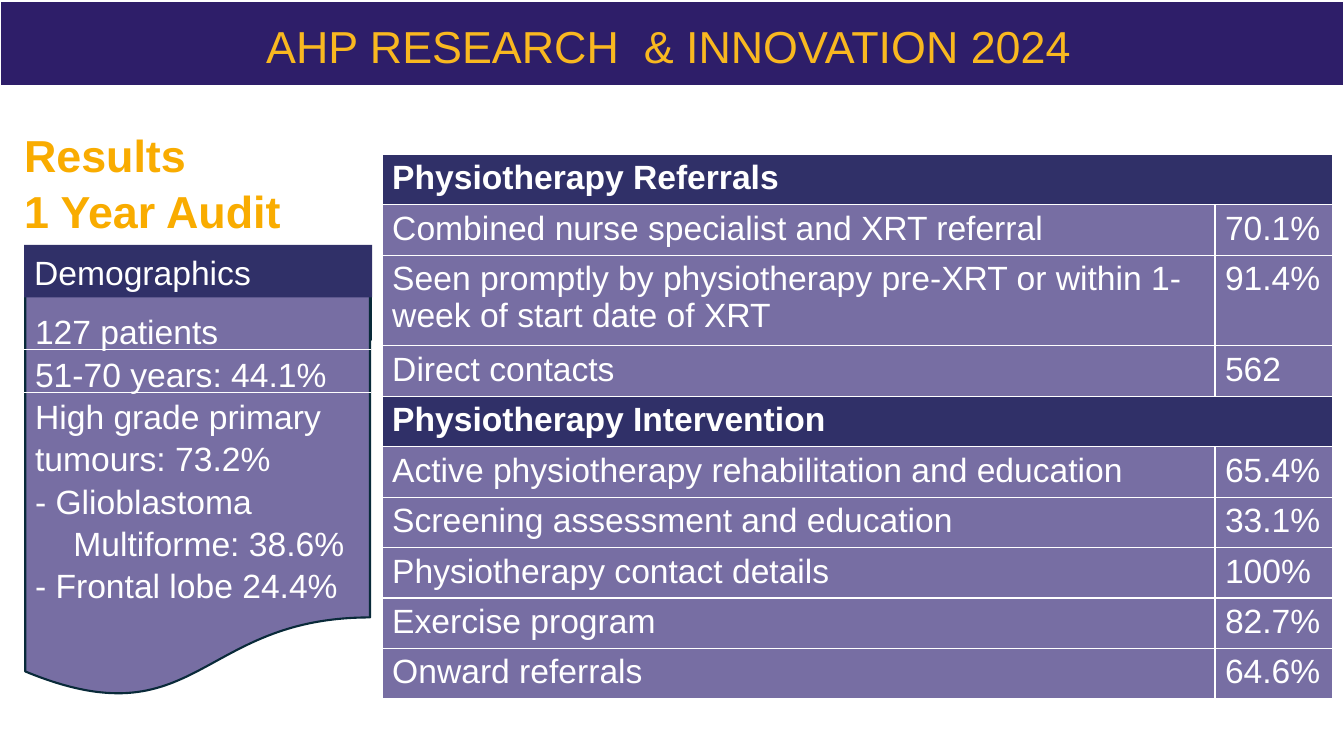
from lxml import etree
from pptx import Presentation
from pptx.dml.color import RGBColor
from pptx.enum.shapes import MSO_CONNECTOR, MSO_SHAPE
from pptx.enum.text import MSO_ANCHOR, PP_ALIGN
from pptx.oxml.ns import qn
from pptx.util import Pt

PX = 9144  # 100 px to the inch
RECTANGLE = MSO_SHAPE.RECTANGLE
DOCUMENT = MSO_SHAPE.FLOWCHART_DOCUMENT
STRAIGHT = MSO_CONNECTOR.STRAIGHT
TOP, MIDDLE = MSO_ANCHOR.TOP, MSO_ANCHOR.MIDDLE
LEFT = PP_ALIGN.LEFT

FONT = "Arial"
LINE_SPACING = 1.05
COLOURS = {
    "white": "FFFFFF",
    "banner": "2E1E69",
    "title": "F9B820",
    "heading": "F9AC00",
    "navy": "303068",
    "lilac": "776EA3",
    "outline": "092A39",
}

TITLE = "AHP RESEARCH  & INNOVATION 2024"
HEADING = ["Results", "1 Year Audit"]
DEMOGRAPHICS = [
    "127 patients",
    "51-70 years: 44.1%",
    "High grade primary tumours: 73.2%",
    "- Glioblastoma Multiforme: 38.6%",
    "- Frontal lobe 24.4%",
]
# A row without a value is a section heading across both columns
AUDIT_ROWS = [
    ("Physiotherapy Referrals", None),
    ("Combined nurse specialist and XRT referral", "70.1%"),
    ("Seen promptly by physiotherapy pre-XRT or within 1-week of start date of XRT", "91.4%"),
    ("Direct contacts", "562"),
    ("Physiotherapy Intervention", None),
    ("Active physiotherapy rehabilitation and education", "65.4%"),
    ("Screening assessment and education", "33.1%"),
    ("Physiotherapy contact details", "100%"),
    ("Exercise program", "82.7%"),
    ("Onward referrals", "64.6%"),
]
COLUMN_WIDTHS = (826, 117)
ROW_HEIGHT, TALL_ROW_HEIGHT, TALL_ROW = 50, 90, 2


def colour(name):
    return RGBColor.from_string(COLOURS[name])


def scaled(*lengths):
    return [length * PX for length in lengths]


def write(frame, lines, size, ink, bold=False, spacing=LINE_SPACING):
    frame.text = "\n".join(lines)
    frame.word_wrap = True
    for para in frame.paragraphs:
        para.alignment = LEFT
        para.line_spacing = spacing
        for span in para.runs:
            span.font.name = FONT
            span.font.size = Pt(size)
            span.font.bold = bold
            span.font.color.rgb = colour(ink)


def add_panel(page, kind, area, fill, outline=None):
    panel = page.shapes.add_shape(kind, *scaled(*area))
    panel.shadow.inherit = False
    panel.fill.solid()
    panel.fill.fore_color.rgb = colour(fill)
    if outline:
        panel.line.color.rgb = colour(outline)
        panel.line.width = Pt(1.5)
    else:
        panel.line.fill.background()
    return panel


def add_text(page, area, lines, size, ink, bold=False):
    box = page.shapes.add_textbox(*scaled(*area))
    write(box.text_frame, lines, size, ink, bold)
    return box


def add_divider(page, left, right, y):
    divider = page.shapes.add_connector(STRAIGHT, *scaled(left, y, right, y))
    divider.line.color.rgb = colour("white")
    divider.line.width = Pt(0.75)
    etree.SubElement(divider.element.spPr, qn("a:effectLst"))


def add_audit_table(page, left, top):
    heights = [ROW_HEIGHT] * len(AUDIT_ROWS)
    heights[TALL_ROW] = TALL_ROW_HEIGHT
    area = scaled(left, top, sum(COLUMN_WIDTHS), sum(heights))
    table = page.shapes.add_table(len(AUDIT_ROWS), len(COLUMN_WIDTHS), *area).table
    for column, width in zip(table.columns, COLUMN_WIDTHS):
        column.width = width * PX
    for index, (values, height) in enumerate(zip(AUDIT_ROWS, heights)):
        row = table.rows[index]
        row.height = height * PX
        is_section = values[1] is None
        if is_section:
            row.cells[0].merge(row.cells[1])
        for cell, value in zip(row.cells, values):
            cell.fill.solid()
            cell.fill.fore_color.rgb = colour("navy" if is_section else "lilac")
            if value:
                write(cell.text_frame, [value], 24, "white", is_section, 1.0)


def add_banner(page):
    banner = add_panel(page, RECTANGLE, (0, 1, 1333, 84), "banner", "white")
    title = page.shapes.title
    title.left, title.top, title.width, title.height = scaled(254, 11, 825, 64)
    write(title.text_frame, [TITLE], 32, "title")
    title.text_frame.vertical_anchor = TOP
    banner.element.addnext(title.element)  # title sits in front of the banner


def add_demographics(page):
    box = add_text(page, (25, 302, 353, 293), DEMOGRAPHICS, 24, "white")
    for para in box.text_frame.paragraphs:
        if para.text.startswith("- "):
            properties = para._p.get_or_add_pPr()
            properties.set("marL", str(38 * PX))
            properties.set("indent", str(-38 * PX))

    label = add_panel(page, RECTANGLE, (24, 243, 345, 52), "navy")
    write(label.text_frame, ["Demographics"], 24, "white")
    label.text_frame.vertical_anchor = MIDDLE
    for y in (347, 389):
        add_divider(page, 24, 368, y)


def main():
    deck = Presentation()
    deck.slide_width, deck.slide_height = scaled(1333, 750)
    page = deck.slides.add_slide(deck.slide_layouts[5])

    # Backing of the demographics column
    add_panel(page, RECTANGLE, (26, 295, 342, 42), "lilac", "outline")
    add_panel(page, DOCUMENT, (25, 287, 342, 406), "lilac", "outline")

    # Heading, table and demographics
    add_text(page, (14, 119, 353, 118), HEADING, 32, "heading", bold=True)
    add_audit_table(page, 379, 153)
    add_demographics(page)

    # Title across the top
    add_banner(page)
    deck.save("out.pptx")


if __name__ == "__main__":
    main()
